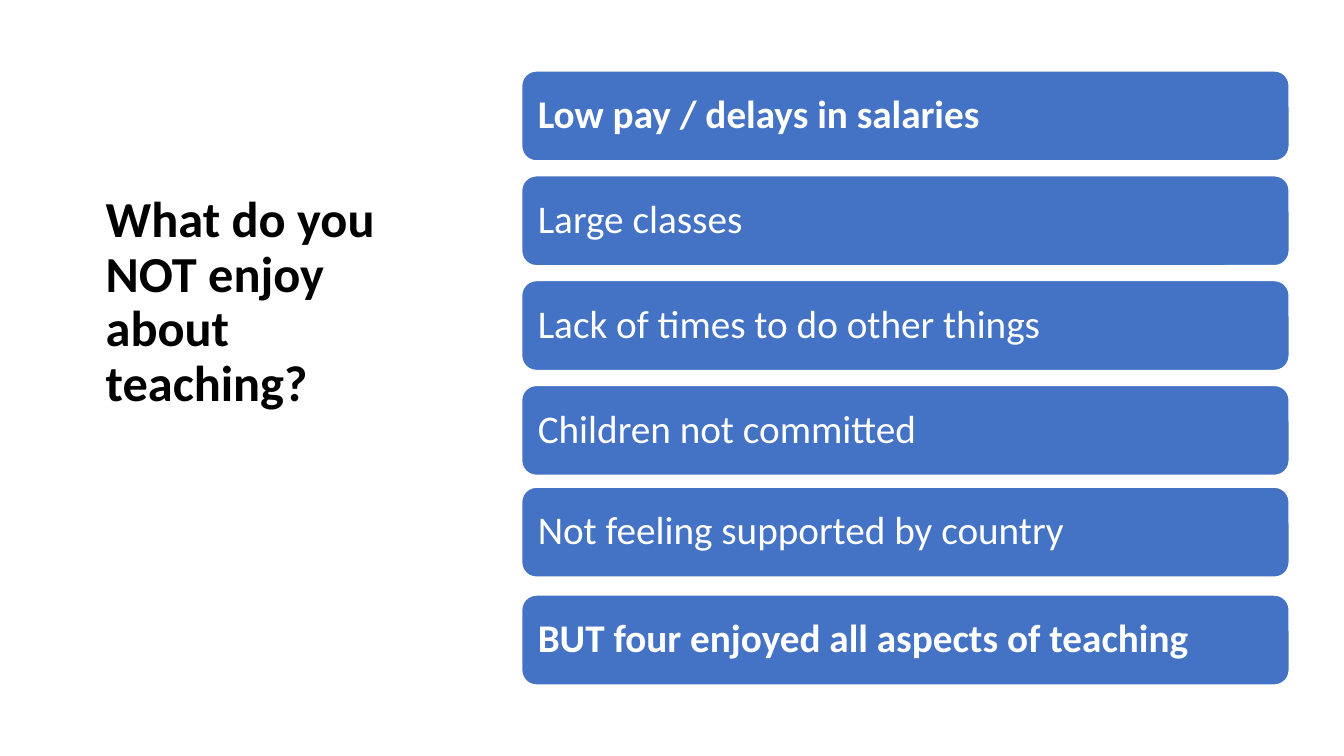
from pptx import Presentation
from pptx.dml.color import RGBColor
from pptx.enum.shapes import MSO_SHAPE
from pptx.enum.text import MSO_ANCHOR, PP_ALIGN
from pptx.util import Inches, Pt

ROUNDED = MSO_SHAPE.ROUNDED_RECTANGLE
TOP, MIDDLE = MSO_ANCHOR.TOP, MSO_ANCHOR.MIDDLE
LEFT = PP_ALIGN.LEFT

TITLE = "What do you NOT enjoy about teaching?"
# (answer, bold, vertical nudge in inches)
ANSWERS = [
    ("Low pay / delays in salaries", True, 0),
    ("Large classes", False, 0),
    ("Lack of times to do other things", False, 0),
    ("Children not committed", False, 0),
    ("Not feeling supported by country", False, -0.03),
    ("BUT four enjoyed all aspects of teaching", True, 0),
]
COLORS = {"title": "000000", "bar": "4472C4", "white": "FFFFFF"}
FONT = "Calibri"

TITLE_BOX = (0.95, 1.88, 3.39, 3.85)
BAR_LEFT, BAR_TOP, BAR_WIDTH, BAR_HEIGHT = 5.17, 0.7, 7.62, 0.9
BAR_PITCH = 1.04


def rgb(name):
    return RGBColor.from_string(COLORS[name])


def write(shape, text, size, color, bold, anchor, inset):
    tf = shape.text_frame
    tf.word_wrap = True
    tf.vertical_anchor = anchor
    tf.margin_left = tf.margin_right = Inches(inset)
    p = tf.paragraphs[0]
    p.text = text
    p.alignment = LEFT
    p.line_spacing = 0.9
    p.font.name = FONT
    p.font.size = Pt(size)
    p.font.bold = bold
    p.font.color.rgb = rgb(color)


def add_bar(s, top, text, bold):
    bar = s.shapes.add_shape(ROUNDED, Inches(BAR_LEFT), Inches(top),
                             Inches(BAR_WIDTH), Inches(BAR_HEIGHT))
    bar.shadow.inherit = False
    bar.fill.solid()
    bar.fill.fore_color.rgb = rgb("bar")
    bar.line.color.rgb = rgb("white")
    bar.line.width = Pt(1.5)
    write(bar, text, 28, "white", bold, MIDDLE, 0.12)


def main():
    prs = Presentation()
    prs.slide_width, prs.slide_height = Inches(13.33), Inches(7.5)
    s = prs.slides.add_slide(prs.slide_layouts[6])

    title = s.shapes.add_textbox(*map(Inches, TITLE_BOX))
    write(title, TITLE, 36, "title", True, TOP, 0.1)

    for row, (text, bold, nudge) in enumerate(ANSWERS):
        add_bar(s, BAR_TOP + row * BAR_PITCH + nudge, text, bold)

    prs.save("out.pptx")


if __name__ == "__main__":
    main()
